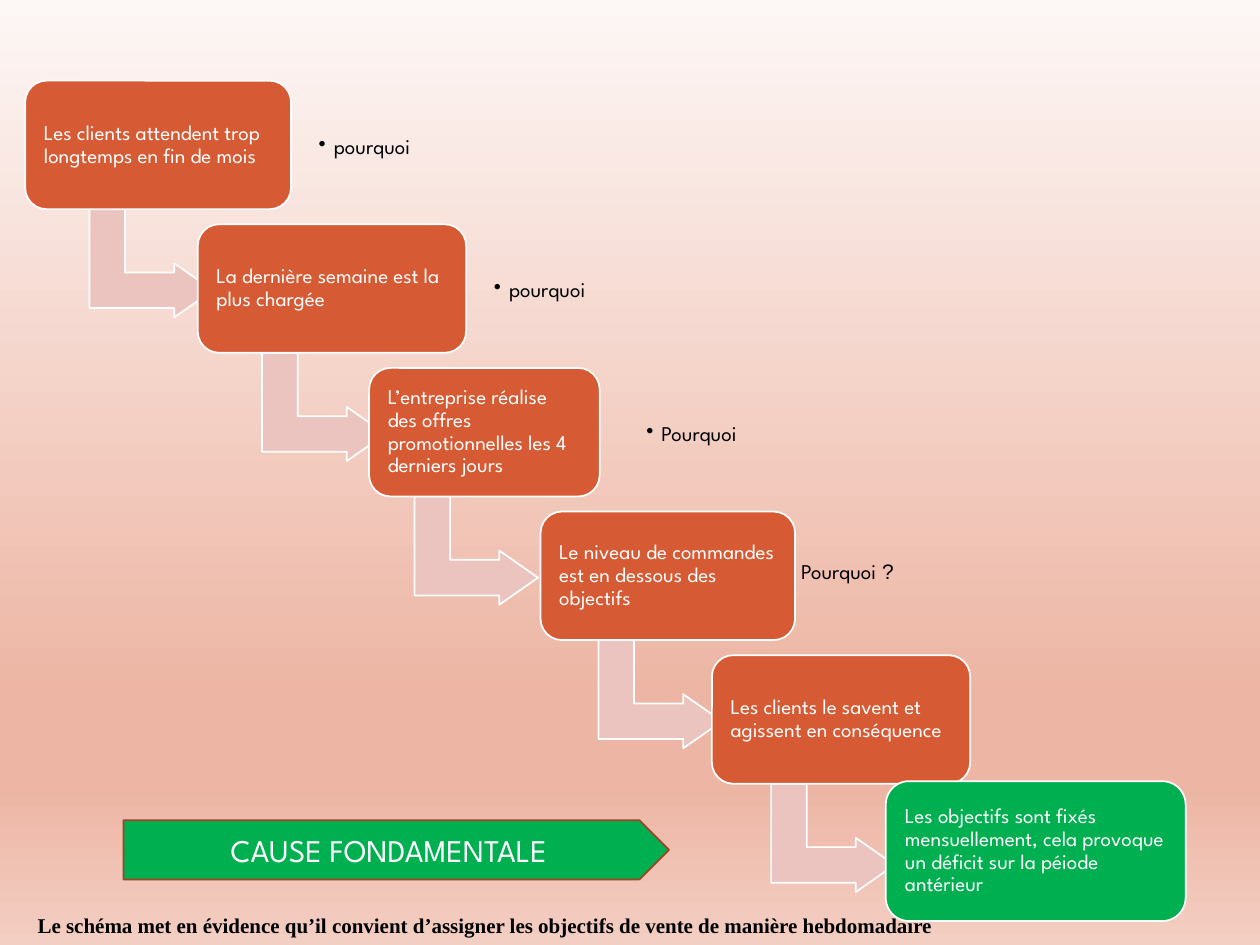
from dataclasses import dataclass
from typing import Optional

import pptx
import pptx.dml.color
import pptx.enum.shapes
import pptx.enum.text
import pptx.oxml
import pptx.oxml.ns
import pptx.util
from pptx.util import Inches

SHAPES = pptx.enum.shapes.MSO_SHAPE
ALIGN = pptx.enum.text.PP_ALIGN
ANCHOR = pptx.enum.text.MSO_ANCHOR
qn = pptx.oxml.ns.qn


@dataclass(frozen=True)
class Theme:
    step: str = "D65B34"
    cause: str = "00B050"
    arrow: str = "ECC4BF"
    plate_line: str = "9E4326"
    white: str = "FFFFFF"
    black: str = "000000"
    backdrop: tuple = ((0, "FDF7F5"), (74, "EDB5A4"), (83, "EDB5A4"), (100, "F3CEC2"))
    font: str = "League Spartan"
    mark_font: str = "Arial"
    note_font: str = "Times New Roman"
    body: int = 12
    banner: int = 18


@dataclass(frozen=True)
class Step:
    text: str
    left: float
    width: float
    arrow_left: float


@dataclass(frozen=True)
class Question:
    text: str
    left: float
    align: Optional[ALIGN] = None


THEME = Theme()
FIRST_TOP, PITCH = 0.64, 1.14
STEP_HEIGHT = 1.02
STEPS = [
    Step("Les clients attendent trop longtemps en fin de mois", 0.2, 2.11, 0.77),
    Step("La dernière semaine est la plus chargée", 1.57, 2.13, 2.14),
    Step("L’entreprise réalise des offres promotionnelles les 4 derniers jours", 2.93, 1.83, 3.35),
    Step("Le niveau de commandes est en dessous des objectifs", 4.29, 2.02, 4.81),
    Step("Les clients le savent et agissent en conséquence", 5.65, 2.05, 6.18),
]
QUESTIONS = [
    Question("pourquoi", 2.46, ALIGN.JUSTIFY),
    Question("pourquoi", 3.85),
    Question("Pourquoi", 5.06),
]


def color(code: str):
    return pptx.dml.color.RGBColor.from_string(code)


def add_span(para, text: str, code: str, font: str = THEME.font,
             size: int = THEME.body, bold: bool = False) -> None:
    span = para.add_run()
    span.text = text
    span.font.name = font
    span.font.size = pptx.util.Pt(size)
    span.font.bold = bold
    span.font.color.rgb = color(code)


def set_insets(frame, inset: float) -> None:
    frame.margin_left = frame.margin_right = Inches(inset)
    frame.margin_top = frame.margin_bottom = Inches(inset)


def add_block(page, kind, left: float, top: float, width: float, height: float,
              fill: str, line: str = THEME.white):
    block = page.shapes.add_shape(
        kind, Inches(left), Inches(top), Inches(width), Inches(height))
    block.shadow.inherit = False
    block.fill.solid()
    block.fill.fore_color.rgb = color(fill)
    block.line.color.rgb = color(line)
    block.line.width = pptx.util.Pt(1)
    return block


def add_text_box(page, left: float, top: float, width: float, height: float):
    box = page.shapes.add_textbox(
        Inches(left), Inches(top), Inches(width), Inches(height))
    box.text_frame.word_wrap = True
    return box.text_frame


def add_card(page, text: str, left: float, top: float, width: float,
             height: float, fill: str) -> None:
    card = add_block(page, SHAPES.ROUNDED_RECTANGLE, left, top, width, height, fill)
    frame = card.text_frame
    frame.word_wrap = True
    frame.vertical_anchor = ANCHOR.MIDDLE
    set_insets(frame, 0.1)
    para = frame.paragraphs[0]
    para.alignment = ALIGN.LEFT
    para.line_spacing = 0.9
    add_span(para, text, THEME.white)


def add_arrow(page, left: float, top: float) -> None:
    arrow = add_block(page, SHAPES.BENT_UP_ARROW, left, top, 0.86, 0.98, THEME.arrow)
    arrow.rotation = 90
    for index, value in enumerate((0.328, 0.25, 0.358)):
        arrow.adjustments[index] = value


def add_question(page, question: Question, top: float) -> None:
    frame = add_text_box(page, question.left, top, 1.06, 0.82)
    frame.vertical_anchor = ANCHOR.MIDDLE
    set_insets(frame, 0.07)
    para = frame.paragraphs[0]
    para.alignment = question.align
    para.line_spacing = 0.9
    properties = para._p.get_or_add_pPr()
    properties.set("marL", str(Inches(0.12)))
    properties.set("indent", str(-Inches(0.12)))
    bullet = pptx.oxml.parse_xml(
        '<a:buChar xmlns:a="http://schemas.openxmlformats.org/drawingml/2006/main" char="•"/>')
    properties.append(bullet)
    add_span(para, question.text, THEME.black)


def paint_background(page) -> None:
    fill = page.background.fill
    fill.gradient()
    fill.gradient_angle = 270
    stops = next(page._element.iter(qn("a:gsLst")))
    for stop in list(stops):
        stops.remove(stop)
    for position, code in THEME.backdrop:
        stop = stops.makeelement(qn("a:gs"), {"pos": str(position * 1000)})
        stop.append(stop.makeelement(qn("a:srgbClr"), {"val": code}))
        stops.append(stop)


def main() -> None:
    deck = pptx.Presentation()
    deck.slide_width, deck.slide_height = Inches(10), Inches(7.5)
    page = deck.slides.add_slide(deck.slide_layouts[6])
    paint_background(page)

    note = add_text_box(page, 0.2, 7.19, 7.35, 0.3)
    add_span(note.paragraphs[0],
             "Le schéma met en évidence qu’il convient d’assigner les objectifs "
             "de vente de manière hebdomadaire",
             THEME.black, THEME.note_font, bold=True)

    for index, step in enumerate(STEPS):
        top = FIRST_TOP + PITCH * index
        add_arrow(page, step.arrow_left, top + 0.96)
        add_card(page, step.text, step.left, top, step.width, STEP_HEIGHT, THEME.step)
    for index, question in enumerate(QUESTIONS):
        add_question(page, question, FIRST_TOP + PITCH * index + 0.12)
    add_card(page,
             "Les objectifs sont fixés mensuellement, cela provoque un déficit "
             "sur la péiode antérieur",
             7.03, 6.2, 2.38, 1.11, THEME.cause)

    last_question = add_text_box(page, 6.26, 4.38, 1.57, 0.3).paragraphs[0]
    add_span(last_question, "Pourquoi", THEME.black)
    add_span(last_question, " ?", THEME.black, THEME.mark_font)

    plate = add_block(page, SHAPES.PENTAGON, 0.98, 6.51, 4.33, 0.47,
                      THEME.cause, THEME.plate_line)
    plate.text_frame.vertical_anchor = ANCHOR.MIDDLE
    banner = plate.text_frame.paragraphs[0]
    banner.alignment = ALIGN.CENTER
    add_span(banner, "CAUSE FONDAMENTALE", THEME.white, size=THEME.banner)

    deck.save("out.pptx")


if __name__ == "__main__":
    main()
